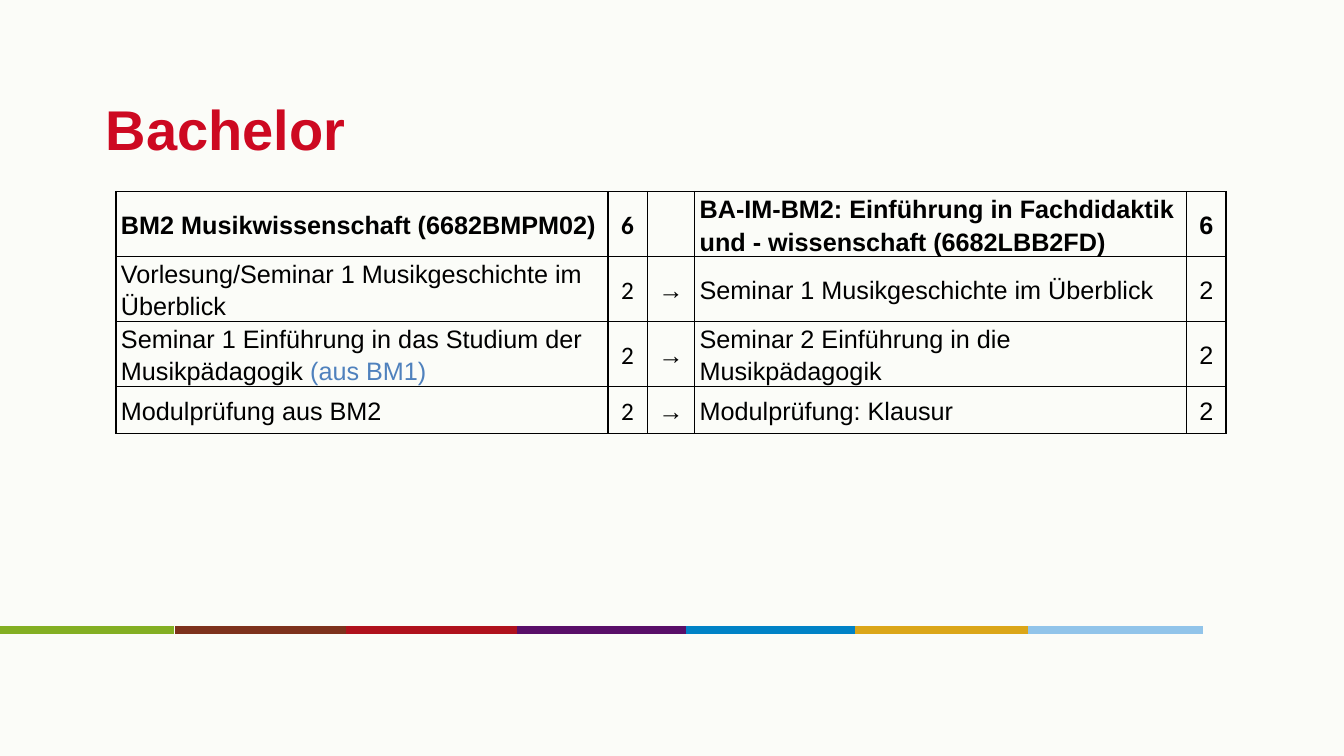
from dataclasses import dataclass

from pptx import Presentation
from pptx.dml.color import RGBColor as RGB
from pptx.enum.shapes import MSO_CONNECTOR as CONN
from pptx.enum.text import MSO_ANCHOR as ANCHOR, MSO_AUTO_SIZE as AUTO, PP_ALIGN as ALIGN
from pptx.oxml import parse_xml
from pptx.oxml.ns import nsdecls
from pptx.util import Inches, Pt

COLORS = {
    "background": "FBFCF8", "title": "CD0921", "text": "000000", "note": "4F81BD",
    "green": "83AF23", "brown": "7D321D", "red": "AF111D", "purple": "590F68",
    "blue": "0082C6", "gold": "DBA619", "sky": "91C4EA",
}


@dataclass
class Stripe:
    left: float
    color: str


@dataclass
class Module:
    """One row: a course with its credits, and the course it is mapped to."""
    old: str
    old_points: str
    arrow: str
    new: str
    new_points: str
    note: str = ""
    height: float = 0.64
    bold: bool = False

    def cells(self) -> list[str]:
        return [self.old, self.old_points, self.arrow, self.new, self.new_points]


STRIPES = [
    Stripe(0, "green"), Stripe(1.74, "brown"), Stripe(3.43, "red"), Stripe(5.13, "purple"),
    Stripe(6.8, "blue"), Stripe(8.48, "gold"), Stripe(10.2, "sky"),
]
STRIPE_WIDTH, STRIPE_TOP = 1.73, 6.25

MODULES = [
    Module("BM2 Musikwissenschaft (6682BMPM02)", "6", "",
           "BA-IM-BM2: Einführung in Fachdidaktik und - wissenschaft (6682LBB2FD)", "6", bold=True),
    Module("Vorlesung/Seminar 1 Musikgeschichte im Überblick", "2", "→",
           "Seminar 1 Musikgeschichte im Überblick", "2"),
    Module("Seminar 1 Einführung in das Studium der Musikpädagogik ", "2", "→",
           "Seminar 2 Einführung in die Musikpädagogik", "2", note="(aus BM1)"),
    Module("Modulprüfung aus BM2", "2", "→", "Modulprüfung: Klausur", "2", height=0.47),
]
COLUMNS = [4.88, 0.39, 0.47, 4.88, 0.39]
TEXT_COLUMNS = (0, 3)
CALIBRI_COLUMN = 1


def rgb(name: str) -> RGB:
    return RGB.from_string(COLORS[name])


def apply(target, values: dict) -> None:
    for name, value in values.items():
        setattr(target, name, value)


def add_run(p, text: str, color: str, size: float, font: str = "Arial", bold: bool = False) -> None:
    r = p.add_run()
    r.text = text
    apply(r.font, {"name": font, "size": Pt(size), "bold": bold})
    r.font.color.rgb = rgb(color)


def add_stripe(s, stripe: Stripe) -> None:
    top = Inches(STRIPE_TOP)
    line = s.shapes.add_connector(CONN.STRAIGHT, Inches(stripe.left), top,
                                  Inches(stripe.left + STRIPE_WIDTH), top)
    line.line.width = Pt(5.5)
    line.line.color.rgb = rgb(stripe.color)
    line._element.spPr.append(parse_xml(f"<a:effectLst {nsdecls('a')}/>"))


def add_borders(cell) -> None:
    tcPr = cell._tc.get_or_add_tcPr()
    for side in "LRTB":
        tcPr.append(parse_xml(
            f'<a:ln{side} {nsdecls("a")} w="{Pt(1)}"><a:solidFill>'
            f'<a:srgbClr val="{COLORS["text"]}"/></a:solidFill></a:ln{side}>'))


def fill_cell(cell, module: Module, col: int) -> None:
    add_borders(cell)
    cell.fill.background()
    apply(cell, {"vertical_anchor": ANCHOR.MIDDLE, "margin_left": Inches(0.05),
                 "margin_right": Inches(0.05), "margin_top": 0, "margin_bottom": 0})
    p = cell.text_frame.paragraphs[0]
    apply(p, {"line_spacing": 1.15,
              "alignment": ALIGN.LEFT if col in TEXT_COLUMNS else ALIGN.CENTER})
    text = module.cells()[col]
    if text:
        font = "Calibri" if col == CALIBRI_COLUMN else "Arial"
        add_run(p, text, "text", 18, font, module.bold)
    if col == 0 and module.note:
        add_run(p, module.note, "note", 18)


def add_module_table(s) -> None:
    height = sum(module.height for module in MODULES)
    table = s.shapes.add_table(len(MODULES), len(COLUMNS), Inches(1.15), Inches(1.9),
                               Inches(sum(COLUMNS)), Inches(height)).table
    apply(table, {"first_row": False, "horz_banding": False})
    for column, width in zip(table.columns, COLUMNS):
        column.width = Inches(width)
    for row, module in zip(table.rows, MODULES):
        row.height = Inches(module.height)
        for col, cell in enumerate(row.cells):
            fill_cell(cell, module, col)


def add_title(s, text: str) -> None:
    sp = s.shapes.title
    apply(sp, {"left": Inches(1), "top": Inches(0.65),
               "width": Inches(11.33), "height": Inches(1.25)})
    tf = sp.text_frame
    margins = {f"margin_{side}": Inches(0.05) for side in ("left", "right", "top", "bottom")}
    apply(tf, {"word_wrap": True, "auto_size": AUTO.NONE,
               "vertical_anchor": ANCHOR.MIDDLE, **margins})
    p = tf.paragraphs[0]
    p.alignment = ALIGN.LEFT
    add_run(p, text, "title", 40, bold=True)


def main() -> None:
    prs = Presentation()
    apply(prs, {"slide_width": Inches(13.33), "slide_height": Inches(7.5)})
    s = prs.slides.add_slide(prs.slide_layouts[5])
    s.background.fill.solid()
    s.background.fill.fore_color.rgb = rgb("background")
    for stripe in STRIPES:
        add_stripe(s, stripe)
    add_title(s, "Bachelor")
    add_module_table(s)
    prs.save("out.pptx")


if __name__ == "__main__":
    main()
